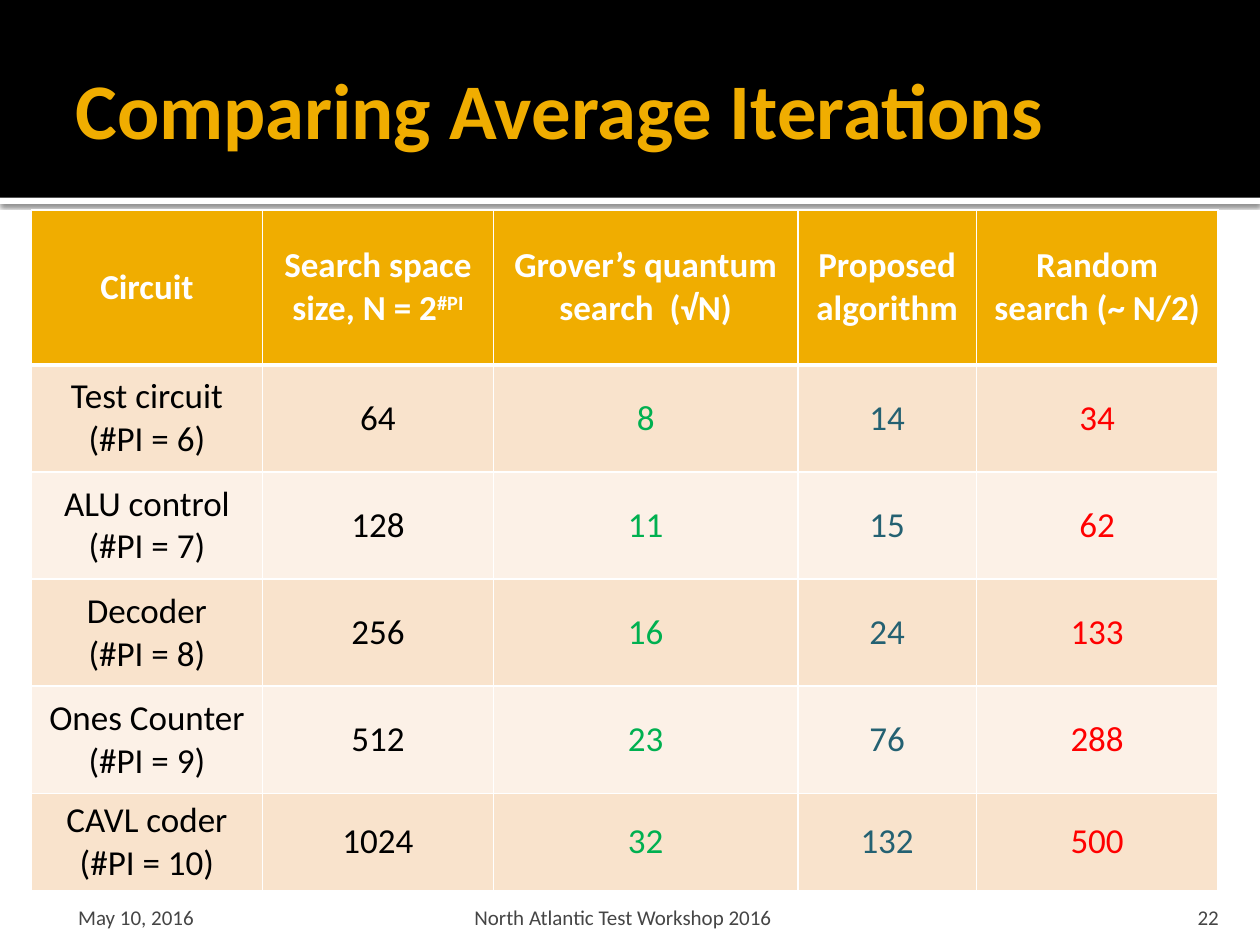
from lxml.etree import SubElement
from pptx import Presentation
from pptx.dml.color import RGBColor
from pptx.enum.shapes import MSO_SHAPE
from pptx.enum.text import MSO_ANCHOR, PP_ALIGN
from pptx.oxml.ns import qn
from pptx.util import Pt

GOLD, WHITE, BLACK, GREY = "F0AD00", "FFFFFF", "000000", "454545"
BANDS = ("F9E3CC", "FCF1E7")
INKS = (BLACK, BLACK, "00B050", "246172", "FF0000")
WIDTHS = (132, 132, 174, 102, 138)
HEIGHTS = (88.5, 61.2, 61.2, 61.2, 61.2, 55.5)
HEADS = ("Circuit", "Search space size, N = 2^#PI",
         "Grover’s quantum search  (√N)", "Proposed algorithm",
         "Random search (~ N/2)")
ROWS = (
    ("Test circuit\n(#PI = 6)", 64, 8, 14, 34),
    ("ALU control (#PI = 7)", 128, 11, 15, 62),
    ("Decoder\n(#PI = 8)", 256, 16, 24, 133),
    ("Ones Counter\n(#PI = 9)", 512, 23, 76, 288),
    ("CAVL coder\n(#PI = 10)", 1024, 32, 132, 500),
)


def color(code):
    return RGBColor.from_string(code)


def style(para, size, ink, bold=False, align=PP_ALIGN.LEFT):
    para.alignment = align
    font = para.font
    font.name, font.size, font.bold = "Calibri", Pt(size), bold
    font.color.rgb = color(ink)


def add_band(slide, top, height, fill):
    band = slide.shapes.add_shape(
        MSO_SHAPE.RECTANGLE, 0, Pt(top), Pt(720), Pt(height))
    band.shadow.inherit = False
    band.fill.solid()
    band.fill.fore_color.rgb = color(fill)
    band.line.fill.background()
    return band


def add_shadow(shape):
    """Cast a soft shadow straight down."""
    effects = shape._element.spPr.find(qn("a:effectLst"))
    shade = SubElement(effects, qn("a:outerShdw"), blurRad=str(Pt(2.5)),
                       dist=str(Pt(0.8)), dir="5400000", rotWithShape="0")
    ink = SubElement(shade, qn("a:srgbClr"), val=BLACK)
    SubElement(ink, qn("a:alpha"), val="60000")


def add_text(slide, text, place, insets, anchor, **look):
    box = slide.shapes.add_textbox(*map(Pt, place))
    frame = box.text_frame
    frame.word_wrap = True
    frame.vertical_anchor = anchor
    (frame.margin_left, frame.margin_top,
     frame.margin_right, frame.margin_bottom) = map(Pt, insets)
    frame.text = text
    style(frame.paragraphs[0], **look)


def add_border(cell, side, width):
    line = SubElement(cell._tc.get_or_add_tcPr(), qn("a:ln" + side),
                      w=str(Pt(width)))
    fill = SubElement(line, qn("a:solidFill"))
    SubElement(fill, qn("a:srgbClr"), val=WHITE)


def fill_cell(cell, text, fill, ink, bold, edges):
    """Write a cell; text after ^ is raised, edges are top and bottom widths."""
    base, _, power = text.partition("^")
    frame = cell.text_frame
    frame.text = base
    if power:
        run = frame.paragraphs[0].add_run()
        run.text = power
        run._r.get_or_add_rPr().set("baseline", "30000")
    for para in frame.paragraphs:
        style(para, 20, ink, bold, PP_ALIGN.CENTER)
    cell.vertical_anchor = MSO_ANCHOR.MIDDLE
    for side, width in zip("LRTB", (1, 1, *edges)):
        add_border(cell, side, width)
    cell.fill.solid()
    cell.fill.fore_color.rgb = color(fill)


def add_grid(slide):
    table = slide.shapes.add_table(
        len(HEIGHTS), len(WIDTHS), Pt(18), Pt(120),
        Pt(sum(WIDTHS)), Pt(sum(HEIGHTS))).table
    table.first_row = table.horz_banding = False
    for col, width in zip(table.columns, WIDTHS):
        col.width = Pt(width)
    for row, height in zip(table.rows, HEIGHTS):
        row.height = Pt(height)
    for c, head in enumerate(HEADS):
        fill_cell(table.cell(0, c), head, GOLD, WHITE, True, (1, 3))
    for r, row in enumerate(ROWS, 1):
        edges = (3 if r == 1 else 1, 1)
        for c, value in enumerate(row):
            fill_cell(table.cell(r, c), str(value), BANDS[(r - 1) % 2],
                      INKS[c], False, edges)


def add_foot(slide, text, left, width, insets, align):
    add_text(slide, text, (left, 509.8, width, 21.6), insets,
             MSO_ANCHOR.BOTTOM, size=12, ink=GREY, align=align)


def main():
    deck = Presentation()
    deck.slide_width, deck.slide_height = Pt(720), Pt(540)
    slide = deck.slides.add_slide(deck.slide_layouts[6])
    add_shadow(add_band(slide, 113, 3.6, WHITE))
    add_band(slide, 0, 113, BLACK)
    add_text(slide, "Comparing Average Iterations", (36, 12.2, 648, 98.6),
             (7.2, 3.6, 3.6, 3.6), MSO_ANCHOR.MIDDLE,
             size=45, ink=GOLD, bold=True)
    add_foot(slide, "May 10, 2016", 36, 168, (8.64, 3.6, 3.6, 0),
             PP_ALIGN.LEFT)
    add_foot(slide, "22", 646, 57.6, (7.2, 3.6, 7.2, 0), PP_ALIGN.RIGHT)
    add_grid(slide)
    add_foot(slide, "North Atlantic Test Workshop 2016", 208, 296,
             (3.6, 3.6, 3.6, 0), PP_ALIGN.CENTER)
    deck.save("out.pptx")


if __name__ == "__main__":
    main()
